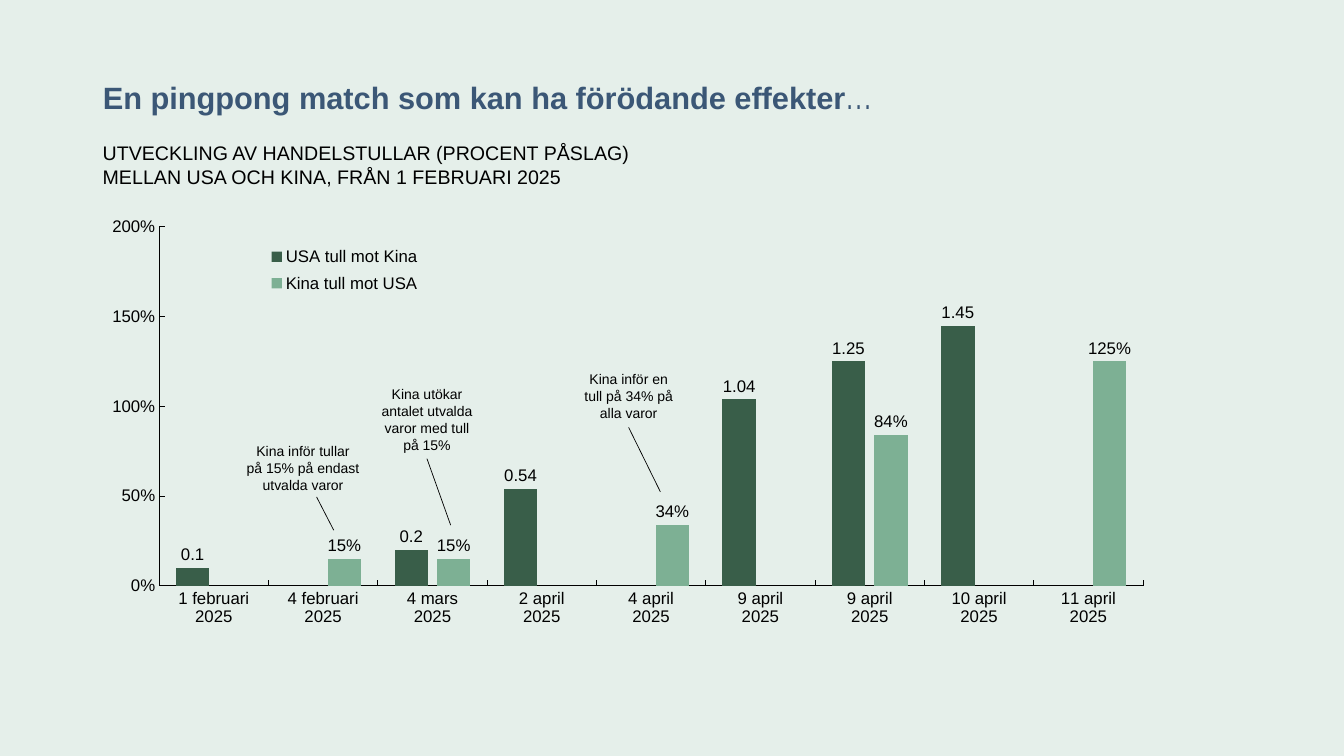
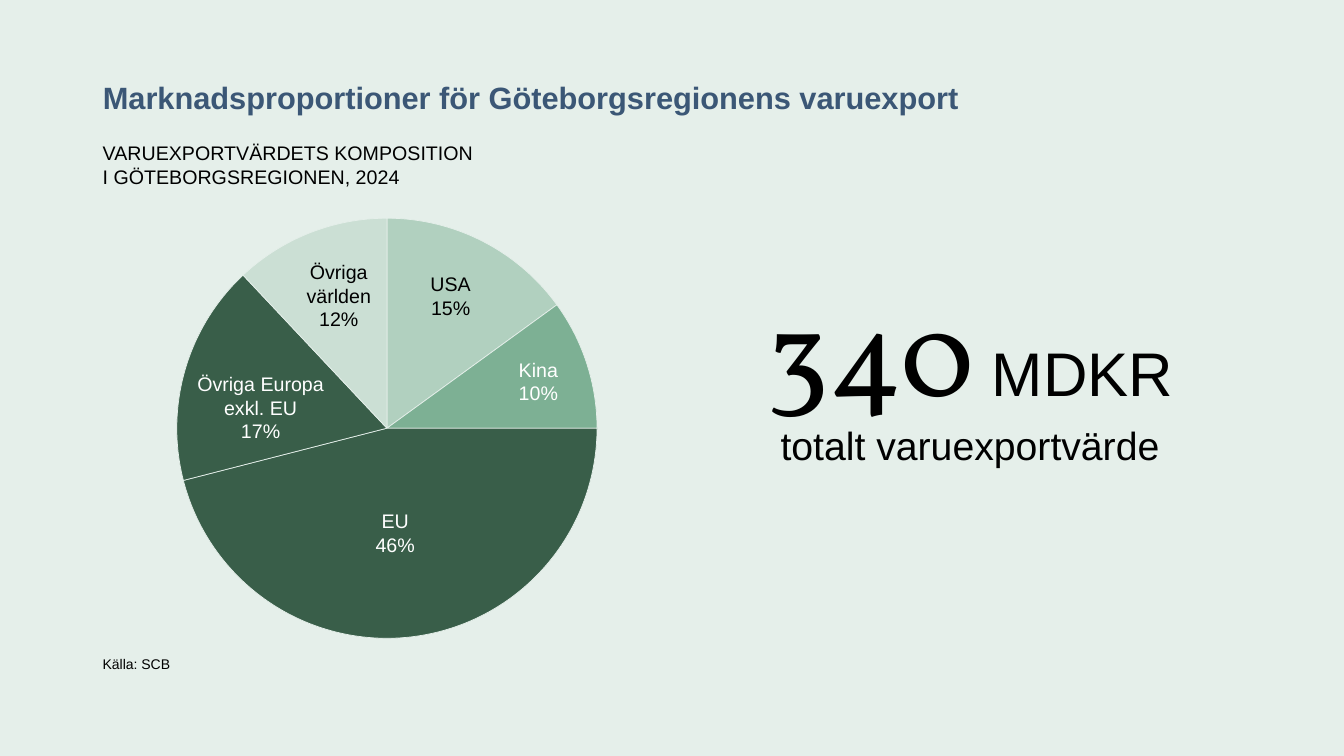
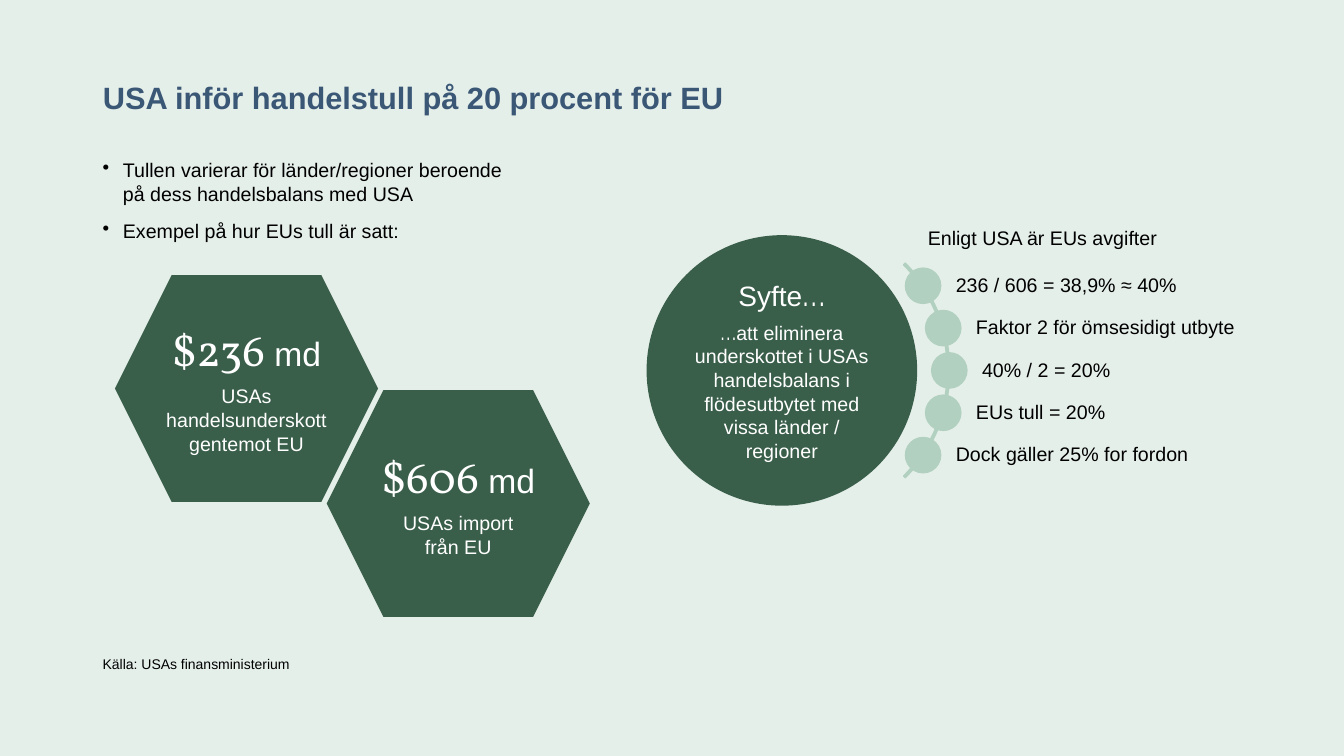
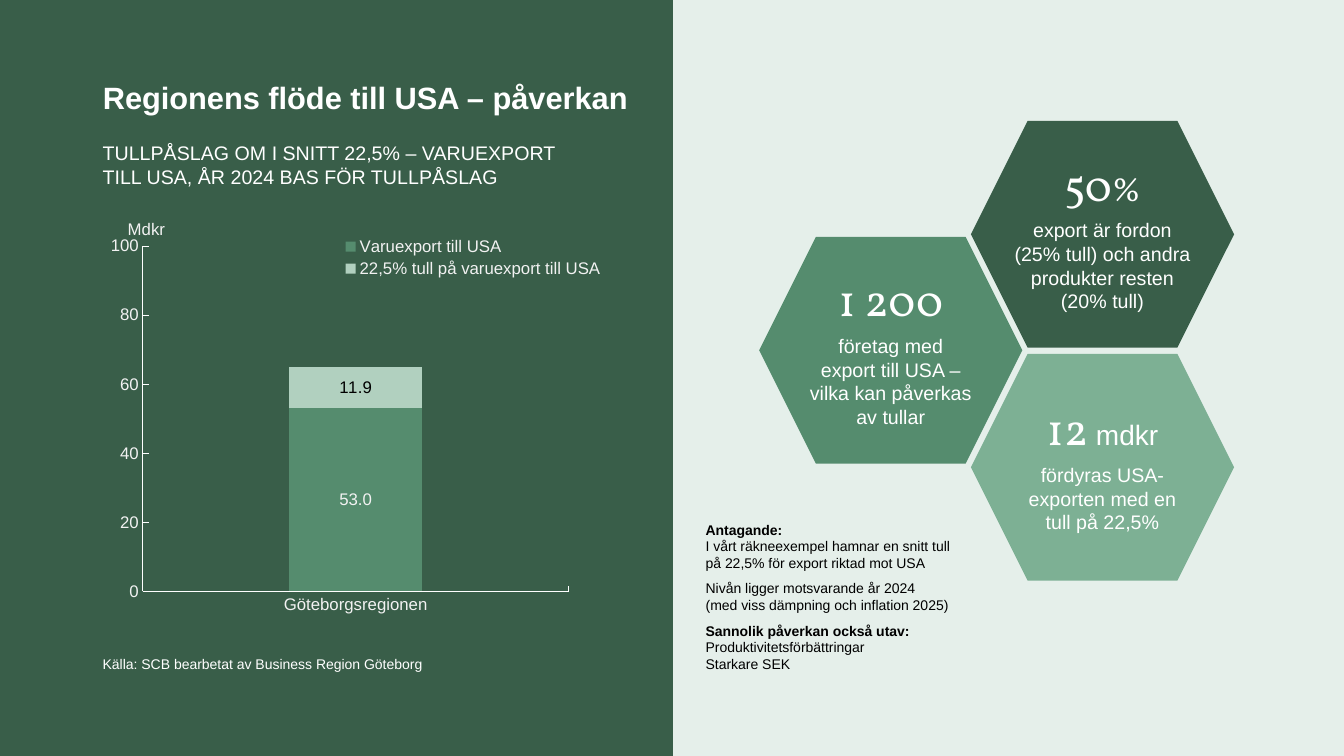
import copy
import math
import lxml.etree
import pptx
import pptx.chart.data
import pptx.dml.color
import pptx.enum.chart
import pptx.enum.shapes
import pptx.enum.text
import pptx.oxml.ns
import pptx.util

BLACK, WHITE, PALE, BLUE = "000000", "FFFFFF", "E5EFEA", "3B5776"
DARK, MID, SOFT, LIGHT, FAINT = "395E49", "558C6E", "7DB094", "B1D0BF", "CBDFD4"
BODY, SERIF, DOTS = "Arial", "Vollkorn", "TeX Gyre Adventor"
LEFT = 92

ALIGN = {"l": pptx.enum.text.PP_ALIGN.LEFT, "c": pptx.enum.text.PP_ALIGN.CENTER}
ANCHOR = {
    "t": pptx.enum.text.MSO_ANCHOR.TOP,
    "m": pptx.enum.text.MSO_ANCHOR.MIDDLE,
    "b": pptx.enum.text.MSO_ANCHOR.BOTTOM,
}
SHAPE = pptx.enum.shapes.MSO_SHAPE
CHART = pptx.enum.chart.XL_CHART_TYPE
LABEL = pptx.enum.chart.XL_LABEL_POSITION


def px(n):
    return pptx.util.Emu(n * 9144)


def rgb(color):
    return pptx.dml.color.RGBColor.from_string(color)


def child(parent, tag, **attrs):
    return lxml.etree.SubElement(parent, pptx.oxml.ns.qn(tag), attrs)


def style_font(font, size, color, name=BODY, bold=False):
    font.size, font.name, font.bold = pptx.util.Pt(size), name, bold
    font.color.rgb = rgb(color)


def style_line(line, color, width):
    line.color.rgb = rgb(color)
    line.width = pptx.util.Pt(width)


def write(tf, text, join=False, size=14, font=BODY, color=BLACK, bold=False,
          align="l", before=0, after=0, spacing=None, bullet=False):
    if join or not tf.text:
        p = tf.paragraphs[-1]
    else:
        p = tf.add_paragraph()
    if not join:
        p.alignment = ALIGN[align]
        p.space_before, p.space_after = pptx.util.Pt(before), pptx.util.Pt(after)
        if spacing:
            p.line_spacing = spacing
        if bullet:
            pPr = p._p.get_or_add_pPr()
            pPr.set("marL", str(px(20)))
            pPr.set("indent", str(px(-20)))
            child(pPr, "a:buChar", char="•")
    for i, line in enumerate(text.split("\n")):
        if i:
            p.add_line_break()
            p._p[-1].append(copy.deepcopy(r._r.get_or_add_rPr()))
        r = p.add_run()
        r.text = line
        style_font(r.font, size, color, font, bold)


def set_layout(parent, index, x, y, w=None, h=None, inner=False):
    for old in parent.findall(pptx.oxml.ns.qn("c:layout")):
        parent.remove(old)
    layout = child(parent, "c:layout")
    parent.insert(index, layout)
    manual = child(layout, "c:manualLayout")
    if inner:
        child(manual, "c:layoutTarget", val="inner")
    for axis in "xy":
        child(manual, f"c:{axis}Mode", val="edge")
    for key, value in zip("xywh", (x, y, w, h)):
        if value is not None:
            child(manual, f"c:{key}", val=str(value))


class Deck:
    def __init__(self):
        self.prs = pptx.Presentation()
        self.prs.slide_width, self.prs.slide_height = px(1333), px(750)
        fill = self.prs.slide_master.background.fill
        fill.solid()
        fill.fore_color.rgb = rgb(PALE)
        self.slide = None

    def frame(self, sp, anchor="t", insets=(10, 5, 10, 5)):
        tf = sp.text_frame
        tf.word_wrap = True
        tf.auto_size = pptx.enum.text.MSO_AUTO_SIZE.NONE
        tf.vertical_anchor = ANCHOR[anchor]
        tf.margin_left, tf.margin_top, tf.margin_right, tf.margin_bottom = map(px, insets)
        return tf

    def new_slide(self, title, width=1150, color=BLUE):
        self.slide = self.prs.slides.add_slide(self.prs.slide_layouts[5])
        sp = self.slide.shapes.title
        sp.left, sp.top, sp.width, sp.height = map(px, (LEFT, 40, width, 80))
        tf = self.frame(sp, "b")
        write(tf, title, size=22, color=color, bold=True, spacing=pptx.util.Pt(31))
        return tf

    def box(self, x, y, w, h, **fmt):
        sp = self.slide.shapes.add_textbox(*map(px, (x, y, w, h)))
        self.frame(sp, **fmt)
        return sp

    def subtitle(self, text, color=BLACK):
        write(self.box(LEFT, 135, 570, 51).text_frame, text, color=color)

    def source(self, text, color=BLACK):
        tf = self.box(LEFT, 645, 479, 27, anchor="b").text_frame
        write(tf, text, size=10, color=color)

    def shape(self, kind, x, y, w, h, fill, line=None, **fmt):
        sp = self.slide.shapes.add_shape(kind, *map(px, (x, y, w, h)))
        sp.shadow.inherit = False
        sp.fill.solid()
        sp.fill.fore_color.rgb = rgb(fill)
        if line:
            style_line(sp.line, line, 1)
        else:
            sp.line.fill.background()
        self.frame(sp, "m", **fmt)
        return sp

    def panel(self, w, color):
        sp = self.shape(SHAPE.RECTANGLE, 0, 0, w, 750, color, color)
        self.slide.shapes._spTree.insert(2, sp._element)

    def hexagon(self, x, y, fill, figure, unit, text, unit_size=24, unit_font=BODY,
                after=0, **fmt):
        tf = self.shape(SHAPE.HEXAGON, x, y, 261, 225, fill, **fmt).text_frame
        write(tf, figure, size=32, font=SERIF, color=WHITE, align="c", after=6)
        if unit:
            write(tf, unit, join=True, size=unit_size, font=unit_font, color=WHITE)
        write(tf, text, color=WHITE, align="c", after=after)

    def callout(self, x, y, h, text, end, start=None):
        sp = self.box(x, y, 133, h)
        write(sp.text_frame, text, size=10, align="c")
        cn = self.slide.shapes.add_connector(
            pptx.enum.shapes.MSO_CONNECTOR.STRAIGHT, *map(px, (start or (x, y)) + end))
        if not start:
            cn.begin_connect(sp, 2)
        style_line(cn.line, BLACK, 0.5)
        child(cn._element.spPr, "a:effectLst")

    def chart(self, kind, x, y, w, h, cats, series, plot, size=12, color=BLACK):
        data = pptx.chart.data.CategoryChartData()
        data.categories = cats
        for name, values in series:
            data.add_series(name, values)
        chart = self.slide.shapes.add_chart(kind, *map(px, (x, y, w, h)), data).chart
        chart.has_title = False
        chart.has_legend = False
        style_font(chart.font, size, color)
        set_layout(chart._chartSpace.chart.plotArea, 0, *plot, inner=True)
        return chart

    def columns(self, kind, place, cats, series, plot, legend, gap, overlap, top, step,
                number, colors, labels, label_at, color=BLACK, line=BLACK):
        chart = self.chart(kind, *place, cats, series, plot, color=color)
        bars = chart.plots[0]
        bars.gap_width, bars.overlap, bars.vary_by_categories = gap, overlap, False
        for s, fill, (fmt, label_color) in zip(bars.series, colors, labels):
            s.invert_if_negative = False
            s.format.fill.solid()
            s.format.fill.fore_color.rgb = rgb(fill)
            dl = s.data_labels
            dl.show_value, dl.position = True, label_at
            dl.number_format, dl.number_format_is_linked = fmt, False
            style_font(dl.font, 12, label_color)
        for axis in (chart.category_axis, chart.value_axis):
            axis.has_major_gridlines = False
            axis.major_tick_mark = pptx.enum.chart.XL_TICK_MARK.INSIDE
            axis.minor_tick_mark = pptx.enum.chart.XL_TICK_MARK.NONE
            style_line(axis.format.line, line, 0.5)
            style_font(axis.tick_labels.font, 12, color)
        axis = chart.value_axis
        axis.minimum_scale, axis.maximum_scale, axis.major_unit = 0, top, step
        axis.tick_labels.number_format = number
        axis.tick_labels.number_format_is_linked = False
        chart.has_legend = True
        chart.legend.position = pptx.enum.chart.XL_LEGEND_POSITION.TOP
        chart.legend.include_in_layout = False
        style_font(chart.legend.font, 12, color)
        set_layout(chart.legend._element, 1, *legend)
        return chart


def tariff_slide(deck):
    tf = deck.new_slide("En pingpong match som kan ha förödande effekter")
    write(tf, "…", join=True, size=22, font=DOTS, color=BLUE)
    deck.subtitle("UTVECKLING AV HANDELSTULLAR (PROCENT PÅSLAG)\n"
                  "MELLAN USA OCH KINA, FRÅN 1 FEBRUARI 2025")
    days = ("1 februari", "4 februari", "4 mars", "2 april", "4 april",
            "9 april", "9 april", "10 april", "11 april")
    deck.columns(
        CHART.COLUMN_CLUSTERED, (LEFT, 198, 1063, 437), [f"{day}\n2025" for day in days],
        [("USA tull mot Kina", (0.1, None, 0.2, 0.54, None, 1.04, 1.25, 1.45, None)),
         ("Kina tull mot USA", (None, 0.15, 0.15, None, 0.34, None, 0.84, None, 1.25))],
        plot=(0.062, 0.062, 0.918, 0.815), legend=(0.15, 0.09, 0.17, 0.14),
        gap=100, overlap=-27, top=2, step=0.5, number="0%", colors=(DARK, SOFT),
        labels=(("General", BLACK), ("0%", BLACK)), label_at=LABEL.OUTSIDE_END)
    deck.callout(234, 434, 61, "Kina inför tullar\npå 15% på endast utvalda varor",
                 (331, 526), start=(314, 493))
    deck.callout(357, 378, 77, "Kina utökar antalet utvalda varor med tull\npå 15%",
                 (447, 521))
    deck.callout(557, 363, 61, "Kina inför en\ntull på 34% på\nalla varor", (655, 488))


def export_slide(deck):
    deck.new_slide("Marknadsproportioner för Göteborgsregionens varuexport")
    deck.subtitle("VARUEXPORTVÄRDETS KOMPOSITION\nI GÖTEBORGSREGIONEN, 2024")
    deck.source("Källa: SCB")
    tf = deck.box(701, 266, 522, 205).text_frame
    write(tf, "340", size=88, font=SERIF, align="c")
    write(tf, " MDKR", join=True, size=44)
    write(tf, "totalt varuexportvärde", size=28, align="c")
    chart = deck.chart(CHART.PIE, 126, 199, 531, 437, ("1", "2", "3", "4", "5"),
                       [("Series 1", (15, 10, 46, 17, 12))],
                       (0.093, 0.04, 0.785, 0.954), size=10)
    pie = chart.plots[0]
    pie.has_data_labels = False
    for i, color in enumerate((LIGHT, SOFT, DARK, DARK, FAINT)):
        fmt = pie.series[0].points[i].format
        fmt.fill.solid()
        fmt.fill.fore_color.rgb = rgb(color)
        style_line(fmt.line, PALE, 0.5)
    for x, y, w, h, name, share, color in (
            (316, 500, 152, 57, "EU", "46%", WHITE),
            (479, 350, 110, 57, "Kina", "10%", WHITE),
            (392, 265, 110, 57, "USA", "15%", BLACK),
            (169, 364, 179, 81, "Övriga Europa exkl. EU", "17%", WHITE),
            (272, 253, 128, 81, "Övriga\nvärlden", "12%", BLACK)):
        tf = deck.box(x, y, w, h).text_frame
        for text in (name, share):
            write(tf, text, color=color, align="c")


def eu_slide(deck):
    deck.new_slide("USA inför handelstull på 20 procent för EU")
    tf = deck.box(LEFT, 152, 531, 110).text_frame
    write(tf, "Tullen varierar för länder/regioner beroende\npå dess handelsbalans med USA",
          bullet=True)
    write(tf, "Exempel på hur EUs tull är satt:", bullet=True, before=10)
    deck.source("Källa: USAs finansministerium")
    deck.hexagon(114, 273, DARK, "$236", " md", "USAs handelsunderskott gentemot EU")
    deck.hexagon(324, 387, DARK, "$606", " md", "USAs import\nfrån EU")
    tf = deck.shape(SHAPE.OVAL, 642, 234, 267, 267, DARK, DARK, insets=(0, 5, 0, 5)).text_frame
    write(tf, "Syfte", size=20, color=WHITE, align="c", after=6)
    write(tf, "…", join=True, size=20, font=DOTS, color=WHITE)
    write(tf, "…", font=DOTS, color=WHITE, align="c")
    write(tf, "att eliminera underskottet i USAs handelsbalans i flödesutbytet med "
              "vissa länder / regioner", join=True, color=WHITE)
    write(deck.box(893, 219, 282, 34).text_frame, "Enligt USA är EUs avgifter", align="c")
    arc = deck.shape(SHAPE.BLOCK_ARC, 641, 217, 301, 301, LIGHT, LIGHT)
    for i, value in enumerate((189, 27, 0.008)):
        arc.adjustments[i] = value
    steps = ("236 / 606 = 38,9% ≈ 40%", "Faktor 2 för ömsesidigt utbyte",
             "40% / 2 = 20%", "EUs tull = 20%", "Dock gäller 25% for fordon")
    for i, text in enumerate(steps):
        dy = 42 * (i - 2)
        x, y = 791 + round(math.sqrt(150 ** 2 - dy ** 2)), 367 + dy
        tf = deck.box(x, y - 13, 1303 - x, 28, anchor="m", insets=(33, 4, 4, 4)).text_frame
        write(tf, text, spacing=0.9)
        deck.shape(SHAPE.OVAL, x - 17, y - 17, 35, 35, LIGHT, LIGHT)


def impact_slide(deck):
    deck.new_slide("Regionens flöde till USA – påverkan", width=570, color=WHITE)
    deck.panel(667, DARK)
    deck.subtitle("TULLPÅSLAG OM I SNITT 22,5% – VARUEXPORT\n"
                  "TILL USA, ÅR 2024 BAS FÖR TULLPÅSLAG", WHITE)
    deck.source("Källa: SCB bearbetat av Business Region Göteborg", WHITE)
    tight = {"after": 12, "insets": (0, 0, 0, 0)}
    deck.hexagon(963, 351, SOFT, "12", " mdkr",
                 "fördyras USA-exporten med en\ntull på 22,5%", unit_size=20, **tight)
    deck.hexagon(963, 120, DARK, "50", "%",
                 "export är fordon\n(25% tull) och andra produkter resten\n(20% tull)",
                 unit_font=SERIF, **tight)
    deck.hexagon(753, 235, MID, "1 200", "",
                 "företag med\nexport till USA – vilka kan påverkas\nav tullar", **tight)
    tf = deck.box(690, 512, 355, 162).text_frame
    for text, bold, after in (
            ("Antagande:", True, 0),
            ("I vårt räkneexempel hamnar en snitt tull\npå 22,5% för export riktad mot USA",
             False, 6),
            ("Nivån ligger motsvarande år 2024\n(med viss dämpning och inflation 2025)",
             False, 6),
            ("Sannolik påverkan också utav:", True, 0),
            ("Produktivitetsförbättringar", False, 0),
            ("Starkare SEK", False, 0)):
        write(tf, text, size=10, bold=bold, after=after)
    grey = "F2F2F2"
    chart = deck.columns(
        CHART.COLUMN_STACKED, (93, 201, 512, 437), ["Göteborgsregionen"],
        [("Varuexport till USA", (53,)), ("22,5% tull på varuexport till USA", (11.9,))],
        plot=(0.095, 0.099, 0.825, 0.784), legend=(0.47, 0.07, 0.53, 0.11),
        gap=219, overlap=100, top=100, step=20, number="0", colors=(MID, LIGHT),
        labels=(("0.0", grey), ("0.0", BLACK)), label_at=LABEL.CENTER,
        color=grey, line=WHITE)
    title = chart.value_axis.axis_title
    write(title.text_frame, "Mdkr", size=12, color=grey)
    bodyPr = title.text_frame._txBody.bodyPr
    bodyPr.set("rot", "0")
    bodyPr.set("vert", "horz")
    set_layout(title._element, 1, 0.06, 0.03)


def main():
    deck = Deck()
    for build in (tariff_slide, export_slide, eu_slide, impact_slide):
        build(deck)
    deck.prs.save("out.pptx")


if __name__ == "__main__":
    main()
